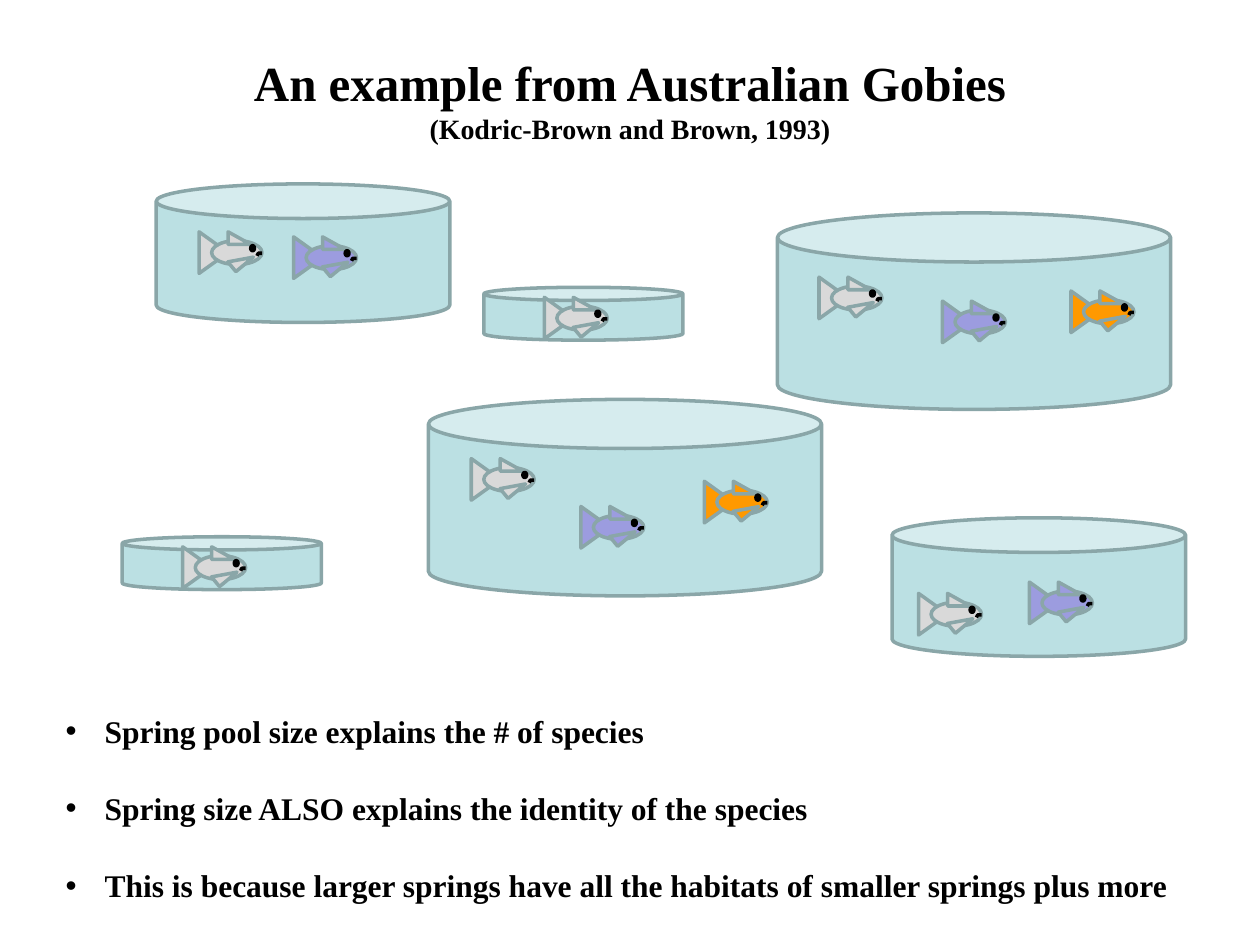
import pptx
import pptx.util
import pptx.dml.color
import pptx.enum.shapes
import pptx.enum.text

Inches, Pt = pptx.util.Inches, pptx.util.Pt
KIND = pptx.enum.shapes.MSO_SHAPE
ALIGN = pptx.enum.text.PP_ALIGN
TOP = pptx.enum.text.MSO_ANCHOR.TOP

BLACK, OUTLINE, WATER = "000000", "8AA6A8", "BBE0E3"
GREY, PURPLE, ORANGE = "D9D9D9", "9C9CDF", "FF9900"

TITLE = [("An example from Australian Gobies", 28), ("(Kodric-Brown and Brown, 1993)", 16)]
POINTS = [
    ("Spring pool size explains the # of species", 18),
    ("Spring size ALSO explains the identity of the species", 18),
    ("This is because larger springs have all the habitats of smaller springs plus more", 18),
]

# Pool size (width, height) with the left, top corners of its pools
POOLS = [
    ((1.58, 0.42), [(3.84, 2.28), (0.97, 4.26)]),
    ((2.33, 1.1), [(1.24, 1.46), (7.08, 4.11)]),
    ((3.12, 1.56), [(6.17, 1.69), (3.4, 3.17)]),
]

# Left, top of each fish's tail, by species colour
FISH = {
    GREY: [(4.27, 2.41), (1.4, 4.39), (1.53, 1.89), (7.24, 4.76), (3.69, 3.69), (6.45, 2.25)],
    PURPLE: [(7.43, 2.44), (4.56, 4.07), (8.12, 4.67), (2.28, 1.93)],
    ORANGE: [(8.45, 2.36), (5.54, 3.87)],
}

# Fish parts: kind, offset from the tail, size, rotation, line colour
FISH_PARTS = [
    (KIND.ISOSCELES_TRIANGLE, (0, 0), (0.33, 0.23), 90, OUTLINE),
    (KIND.OVAL, (0.15, 0.02), (0.4, 0.19), 0, OUTLINE),
    (KIND.RIGHT_TRIANGLE, (0.28, -0.05), (0.18, 0.1), 0, OUTLINE),
    (KIND.RIGHT_TRIANGLE, (0.29, 0.12), (0.18, 0.1), 320.4, OUTLINE),
    (KIND.OVAL, (0.46, 0.06), (0.03, 0.04), 0, BLACK),
]
MOUTH = [(0.55, 0.12), (0.52, 0.12), (0.51, 0.14)]


def colour(hex_text):
    return pptx.dml.color.RGBColor.from_string(hex_text)


def paint(shape, fill, line):
    shape.shadow.inherit = False
    shape.fill.solid()
    shape.fill.fore_color.rgb = colour(fill)
    shape.line.color.rgb = colour(line)
    shape.line.width = Pt(2)


def add_part(shapes, kind, corner, size, fill, line, rotation=0):
    shape = shapes.add_shape(kind, *map(Inches, (*corner, *size)))
    shape.rotation = rotation
    paint(shape, fill, line)


def add_fish(slide, left, top, fill):
    shapes = slide.shapes.add_group_shape().shapes
    for kind, (dx, dy), size, rotation, line in FISH_PARTS:
        add_part(shapes, kind, (left + dx, top + dy), size, fill, line, rotation)
    start, *rest = [(Inches(left + dx), Inches(top + dy)) for dx, dy in MOUTH]
    builder = shapes.build_freeform(*start)
    builder.add_line_segments(rest, close=False)
    paint(builder.convert_to_shape(), fill, BLACK)


def fill_text(box, area, lines, align, gap=0):
    """Place a placeholder and write its lines, with a gap in points between them."""
    box.left, box.top, box.width, box.height = map(Inches, area)
    frame = box.text_frame
    frame.text = "\n".join(text for text, size in lines)
    frame.word_wrap = True
    frame.auto_size = pptx.enum.text.MSO_AUTO_SIZE.NONE
    frame.vertical_anchor = TOP
    for index, (para, (text, size)) in enumerate(zip(frame.paragraphs, lines)):
        para.alignment = align
        para.space_before = Pt(gap if index else 0)
        font = para.runs[0].font
        font.name, font.size, font.bold = "Times New Roman", Pt(size), True
        font.color.rgb = colour(BLACK)


def main():
    deck = pptx.Presentation()
    deck.slide_width, deck.slide_height = Inches(10), Inches(7.5)
    slide = deck.slides.add_slide(deck.slide_layouts[1])
    title, body = slide.placeholders

    fill_text(title, (0, 0.37, 10, 0.84), TITLE, ALIGN.CENTER)
    fill_text(body, (0.42, 5.6, 9.04, 1.62), POINTS, ALIGN.LEFT, gap=22.5)
    for para in body.text_frame.paragraphs:
        properties = para._p.get_or_add_pPr()
        properties.set("marL", str(Inches(0.31)))
        properties.set("indent", str(-Inches(0.31)))

    for size, corners in POOLS:
        for corner in corners:
            add_part(slide.shapes, KIND.CAN, corner, size, WATER, OUTLINE)
    for fill, corners in FISH.items():
        for left, top in corners:
            add_fish(slide, left, top, fill)

    deck.save("out.pptx")


if __name__ == "__main__":
    main()
